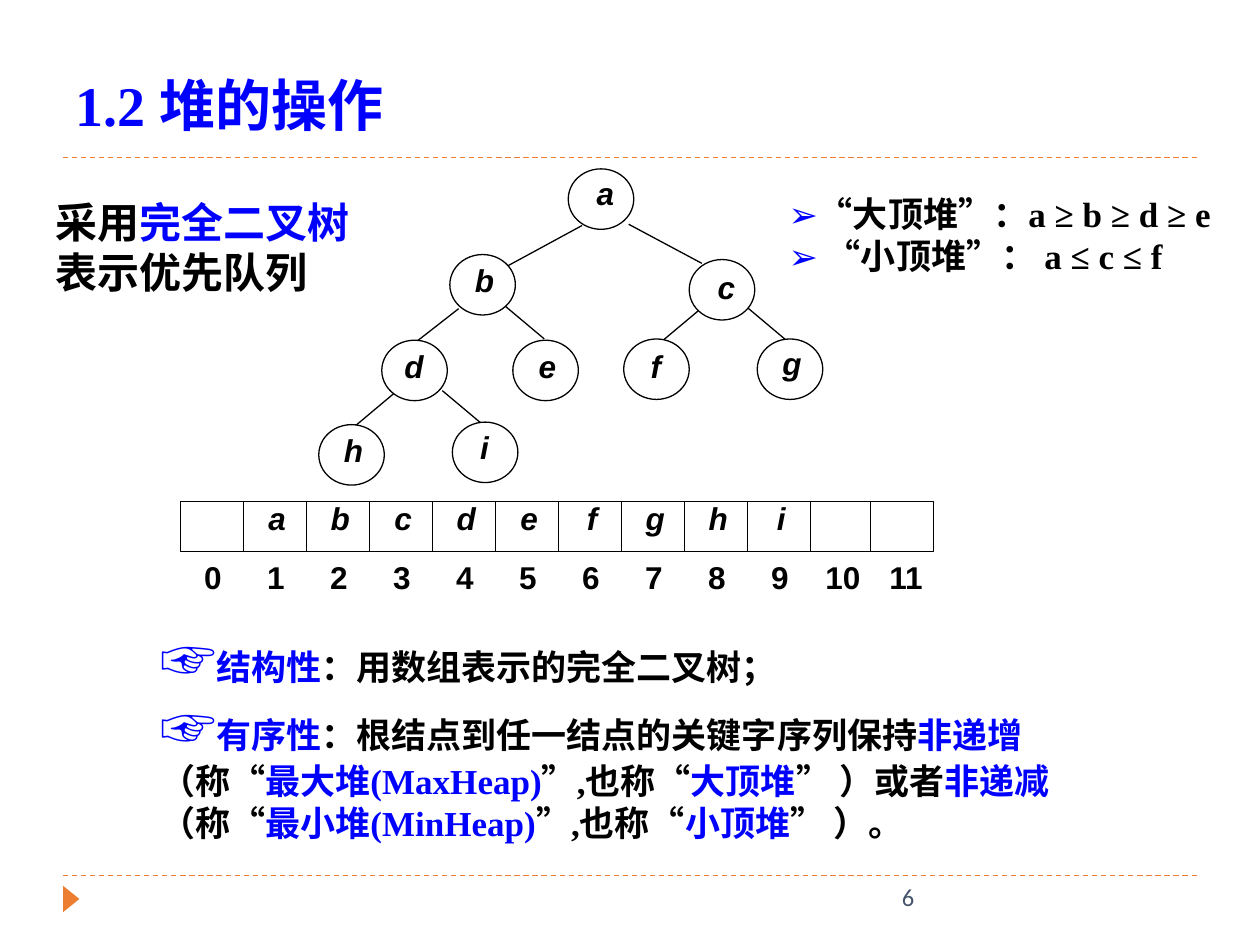
from pptx import Presentation
from pptx.dml.color import RGBColor
from pptx.enum.dml import MSO_LINE
from pptx.enum.shapes import MSO_CONNECTOR, MSO_SHAPE
from pptx.enum.text import MSO_ANCHOR as ANCHOR, MSO_AUTO_SIZE, PP_ALIGN as ALIGN
from pptx.oxml.ns import qn
from pptx.util import Inches, Pt
from lxml.etree import SubElement

BLACK, BLUE, WHITE, ORANGE, SLATE = "000000", "0000FF", "FFFFFF", "ED7D31", "44546A"


def rgb(value):
    return RGBColor.from_string(value)


def add_run(p, text, font="Times New Roman", size=20, color=BLACK, bold=True, italic=False):
    r = p.add_run()
    r.text = text
    r.font.name, r.font.size = font, Pt(size)
    r.font.bold, r.font.italic = bold, italic
    r.font.color.rgb = rgb(color)
    return r


class Canvas:
    def __init__(self, slide):
        self.s = slide

    def fill_text(self, sp, paragraphs, align=ALIGN.LEFT, anchor=ANCHOR.TOP, inset=None,
                  spacing=None, **style):
        tf = sp.text_frame
        tf.word_wrap, tf.auto_size, tf.vertical_anchor = True, MSO_AUTO_SIZE.NONE, anchor
        if inset is not None:
            tf.margin_left = tf.margin_right = tf.margin_top = tf.margin_bottom = Inches(inset)
        for i, runs in enumerate(paragraphs):
            p = tf.add_paragraph() if i else tf.paragraphs[0]
            p.alignment, p.space_before, p.line_spacing = align, Pt(0), spacing
            for text, own in runs:
                add_run(p, text, **{**style, **own})

    def placeholder(self, sp, box, paragraphs, **style):
        sp.left, sp.top, sp.width, sp.height = map(Inches, box)
        self.fill_text(sp, paragraphs, **style)
        for p in sp.text_frame.paragraphs:
            pPr = p._p.get_or_add_pPr()
            pPr.set("marL", "0")
            pPr.set("indent", "0")
            SubElement(pPr, qn("a:buNone"))

    def text(self, box, paragraphs, **style):
        sp = self.s.shapes.add_textbox(*map(Inches, box))
        self.fill_text(sp, paragraphs, **style)

    def shape(self, kind, box, fill=WHITE, line=BLACK, rotation=0):
        sp = self.s.shapes.add_shape(kind, *map(Inches, box))
        sp.shadow.inherit = False
        sp.rotation = rotation
        sp.fill.solid()
        sp.fill.fore_color.rgb = rgb(fill)
        if line:
            sp.line.color.rgb = rgb(line)
            sp.line.width = Pt(0.75)
        else:
            sp.line.fill.background()
        return sp

    def label(self, box, text, **style):
        sp = self.shape(MSO_SHAPE.RECTANGLE, box, line=None)
        self.fill_text(sp, [[(text, {})]], align=ALIGN.CENTER, inset=0, spacing=0.64, **style)

    def strip(self, box, items, first, step, line=None, **style):
        sp = self.shape(MSO_SHAPE.RECTANGLE, box, line=line)
        row = "".join("\t" + item for item in items)
        self.fill_text(sp, [[(row, {})]], inset=0, spacing=0.96, **style)
        tabs = SubElement(sp.text_frame.paragraphs[0]._p.get_or_add_pPr(), qn("a:tabLst"))
        for i in range(len(items)):
            SubElement(tabs, qn("a:tab"), pos=str(Inches(first + i * step - box[0])), algn="ctr")

    def line(self, x1, y1, x2, y2, color=BLACK, dash=None):
        cn = self.s.shapes.add_connector(MSO_CONNECTOR.STRAIGHT, *map(Inches, (x1, y1, x2, y2)))
        cn.line.color.rgb = rgb(color)
        cn.line.width = Pt(0.75)
        if dash:
            cn.line.dash_style = dash
        SubElement(cn._element.spPr, qn("a:effectLst"))


NODES = {
    "a": (4.51, 1.34, 4.68, 1.48), "b": (3.57, 2.02, 3.72, 2.17),
    "c": (5.47, 2.06, 5.64, 2.22), "d": (3.03, 2.7, 3.16, 2.85),
    "e": (4.07, 2.7, 4.22, 2.85), "f": (4.95, 2.69, 5.08, 2.85),
    "g": (6.01, 2.69, 6.16, 2.83), "h": (2.53, 3.37, 2.68, 3.52),
    "i": (3.59, 3.35, 3.72, 3.49),
}
EDGES = [
    (4.62, 1.79, 4.03, 2.11), (4.99, 1.78, 5.57, 2.09),
    (3.64, 2.45, 3.32, 2.7), (4.01, 2.43, 4.32, 2.69),
    (5.55, 2.46, 5.24, 2.72), (5.93, 2.44, 6.24, 2.7),
    (3.13, 3.12, 2.82, 3.38), (3.51, 3.1, 3.82, 3.36),
]
ARRAY_LEFT, ARRAY_TOP, CELL, SLOTS = 1.43, 3.98, 0.5, 12


def main():
    prs = Presentation()
    prs.slide_width, prs.slide_height = Inches(10), Inches(7.5)
    s = prs.slides.add_slide(prs.slide_layouts[1])
    c = Canvas(s)
    blue, hand = {"color": BLUE}, {"color": BLUE, "size": 32}

    for y in (1.25, 6.95):
        c.line(0.5, y, 9.5, y, color=ORANGE, dash=MSO_LINE.DASH)
    c.shape(MSO_SHAPE.ISOSCELES_TRIANGLE, (0.46, 7.07, 0.21, 0.13),
            fill=ORANGE, line=None, rotation=90)

    c.placeholder(s.shapes.title, (0.5, 0.51, 5.78, 0.64),
                  [[("1.2 堆的操作", blue)]], size=32, anchor=ANCHOR.MIDDLE)
    c.text((0.34, 1.51, 2.82, 0.91),
           [[("采用", {}), ("完全二叉树", blue), ("表示优先队列", {})]], size=24)
    c.text((6.16, 1.48, 3.75, 0.77), [
        [("➢", blue), ("“大顶堆”：a ≥ b ≥ d ≥ e", {})],
        [("➢", blue), (" “小顶堆”： a ≤ c ≤ f", {})],
    ])

    for edge in EDGES:
        c.line(*edge)
    number = {"font": "Arial", "size": 18}
    letter = {**number, "italic": True}
    for name, (x, y, label_x, label_y) in NODES.items():
        c.shape(MSO_SHAPE.OVAL, (x, y, 0.52, 0.48))
        c.label((label_x, label_y, 0.25, 0.2), name, **letter)

    c.strip((1.41, 4.45, 6.25, 0.33), [str(i) for i in range(SLOTS)], 1.69, CELL, **number)
    c.strip((ARRAY_LEFT, ARRAY_TOP, 5.98, 0.4), list(NODES), 2.2, CELL, line=BLACK, **letter)
    dividers = [ARRAY_LEFT + i * CELL for i in range(1, SLOTS - 1)]
    for x in [*dividers, 6.91]:
        c.line(x, ARRAY_TOP + 0.4, x, ARRAY_TOP)

    c.placeholder(s.placeholders[1], (1.17, 4.91, 7.5, 1.85), [
        [("☞", hand), ("结构性", blue), ("：用数组表示的完全二叉树；", {})],
        [("☞", hand), ("有序性", blue), ("：根结点到任一结点的关键字序列保持", {}),
         ("非递增", blue), ("（称“", {}), ("最大堆(MaxHeap)", blue), ("”,也称“", {}),
         ("大顶堆", blue), ("” ）或者", {}), ("非递减", blue), ("（称“", {}),
         ("最小堆(MinHeap)", blue), ("”,也称“", {}), ("小顶堆", blue), ("” ）。", {})],
    ])
    c.text((7.06, 6.95, 2.25, 0.4), [[("6", {})]],
           font="Calibri", size=14, color=SLATE, bold=False)
    prs.save("out.pptx")


if __name__ == "__main__":
    main()
